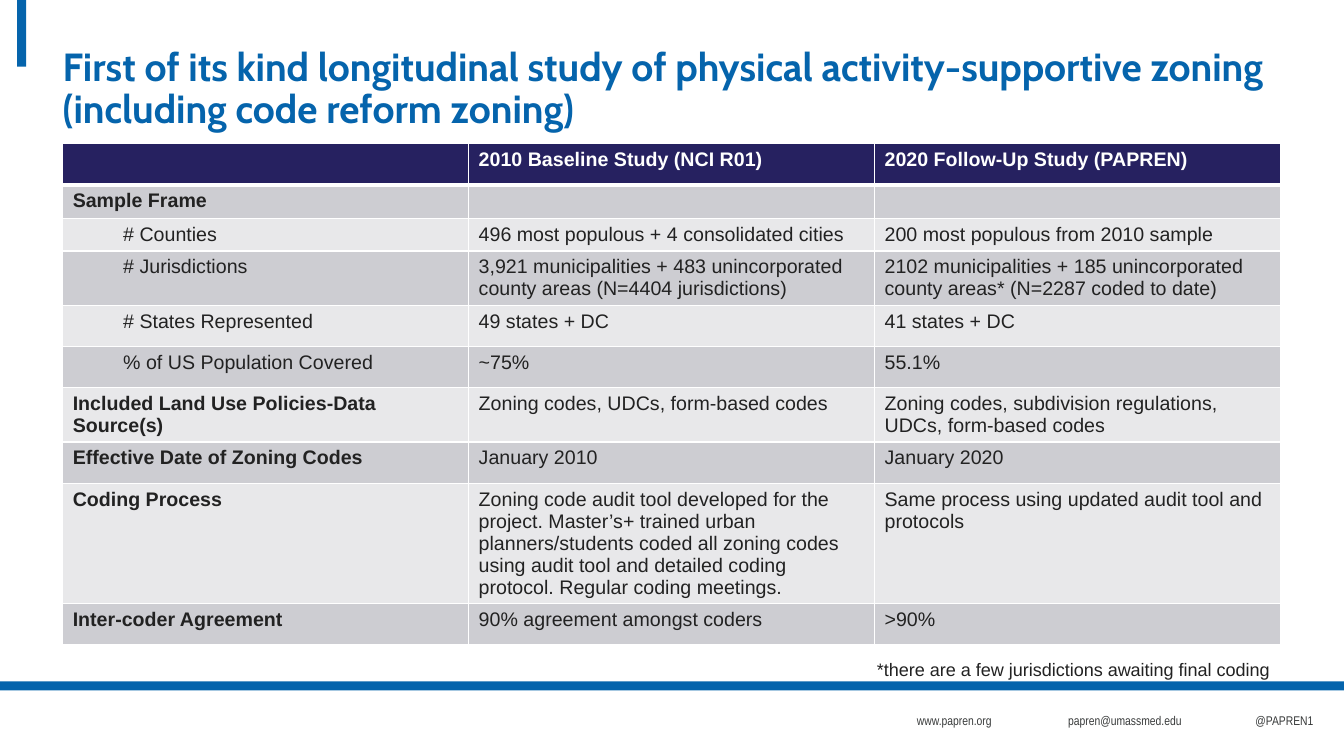
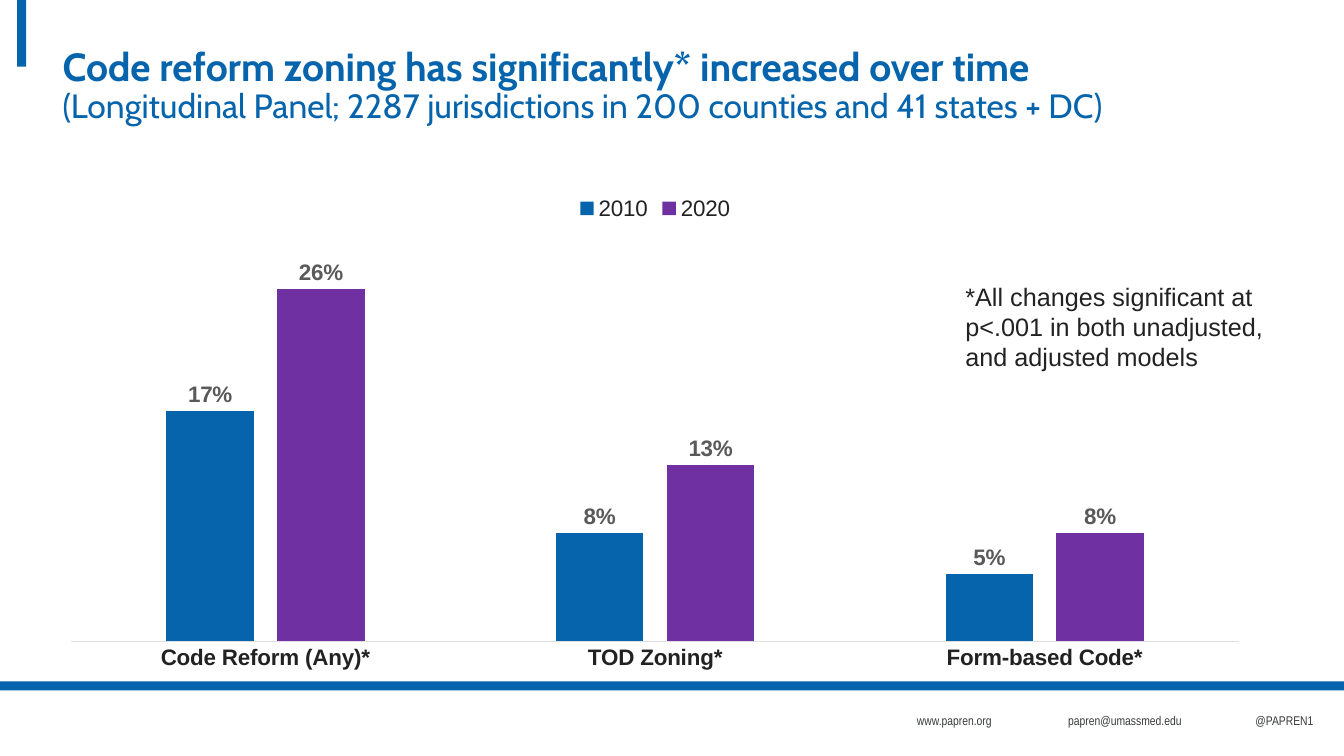
from lxml import etree
from pptx import Presentation
from pptx.chart.data import CategoryChartData
from pptx.dml.color import RGBColor
from pptx.enum.chart import XL_CHART_TYPE, XL_LABEL_POSITION, XL_LEGEND_POSITION, XL_TICK_MARK
from pptx.enum.shapes import MSO_SHAPE
from pptx.enum.text import MSO_ANCHOR, MSO_AUTO_SIZE, PP_ALIGN
from pptx.oxml.ns import qn
from pptx.util import Cm, Pt

RECT = MSO_SHAPE.RECTANGLE
TOP = MSO_ANCHOR.TOP
LEFT = PP_ALIGN.LEFT
NO_FIT = MSO_AUTO_SIZE.NONE
COLUMNS = XL_CHART_TYPE.COLUMN_CLUSTERED
OUTSIDE = XL_LABEL_POSITION.OUTSIDE_END
LEGEND_TOP = XL_LEGEND_POSITION.TOP
NO_TICKS = XL_TICK_MARK.NONE

BLUE, PURPLE, NAVY = "0564AC", "6F31A1", "262160"
INK, GREY, WHITE = "222222", "383A3A", "FFFFFF"
BANDS = ["CDCDD2", "E8E8EA"]
rgb = RGBColor.from_string


def style(font, size, color=INK, bold=False, name="Arial"):
    font.size = Pt(size)
    font.bold = bold
    font.name = name
    font.color.rgb = rgb(color)


def text(p, content, **fmt):
    r = p.add_run()
    r.text = content
    style(r.font, **fmt)


prs = Presentation()
prs.slide_width, prs.slide_height = Cm(33.87), Cm(19.05)
layout = prs.slide_layouts[5]
for ph in list(layout.placeholders)[1:]:
    ph._element.getparent().remove(ph._element)
title = layout.placeholders[0]
title.left, title.top, title.width, title.height = Cm(1.58), Cm(1.19), Cm(30.68), Cm(2.26)
tf = title.text_frame
tf.margin_left = tf.margin_top = tf.margin_right = tf.margin_bottom = 0
tf.vertical_anchor = TOP
tf.auto_size = NO_FIT

titles = [
    [("First of its kind longitudinal study of physical activity-supportive zoning "
      "(including code reform zoning)", 28, True)],
    [("Code reform zoning has significantly* increased over time", 28, True),
     ("(Longitudinal Panel; 2287 jurisdictions in 200 counties and 41 states + DC)", 24, False)],
]
for lines in titles:
    s = prs.slides.add_slide(layout)
    p = s.shapes.title.text_frame.paragraphs[0]
    p.alignment = LEFT
    p.line_spacing = 0.9
    for i, (content, size, bold) in enumerate(lines):
        if i:
            p.add_line_break()
        text(p, content, size=size, color=BLUE, bold=bold, name="Cabin")
study, results = prs.slides

shared = []
for x, y, w, h in [(0, 17.17, 33.87, 0.23), (0.43, 0, 0.23, 1.68)]:
    sp = study.shapes.add_shape(RECT, Cm(x), Cm(y), Cm(w), Cm(h))
    sp.shadow.inherit = False
    sp.fill.solid()
    sp.fill.fore_color.rgb = rgb(BLUE)
    sp.line.fill.background()
    shared.append(sp)
for x, w, contact in [(22.86, 2.44, "www.papren.org"), (26.67, 3.4, "papren@umassmed.edu"),
                      (31.39, 2.01, "@PAPREN1")]:
    sp = study.shapes.add_textbox(Cm(x), Cm(17.83), Cm(w), Cm(0.64))
    sp.text_frame.word_wrap = False
    text(sp.text_frame.paragraphs[0], contact, size=9, color=GREY, name="Arial Narrow")
    shared.append(sp)
for sp in shared:
    layout.shapes._spTree.append(sp._element)

rows = [
    (1.04, "", "2010 Baseline Study (NCI R01)", "2020 Follow-Up Study (PAPREN)"),
    (0.81, "Sample Frame", "", ""),
    (0.81, "# Counties", "496 most populous + 4 consolidated cities", "200 most populous from 2010 sample"),
    (1.36, "# Jurisdictions", "3,921 municipalities + 483 unincorporated county areas (N=4404 jurisdictions)",
     "2102 municipalities + 185 unincorporated county areas* (N=2287 coded to date)"),
    (1.04, "# States Represented", "49 states + DC", "41 states + DC"),
    (1.04, "% of US Population Covered", "~75%", "55.1%"),
    (1.36, "Included Land Use Policies-Data Source(s)", "Zoning codes, UDCs, form-based codes",
     "Zoning codes, subdivision regulations, UDCs, form-based codes"),
    (1.04, "Effective Date of Zoning Codes", "January 2010", "January 2020"),
    (3.02, "Coding Process",
     "Zoning code audit tool developed for the project. Master’s+ trained urban planners/students "
     "coded all zoning codes using audit tool and detailed coding protocol. Regular coding meetings.",
     "Same process using updated audit tool and protocols"),
    (1.04, "Inter-coder Agreement", "90% agreement amongst coders", ">90%"),
]
height = sum(row[0] for row in rows)
table = study.shapes.add_table(len(rows), 3, Cm(1.58), Cm(3.62), Cm(30.68), Cm(height)).table
table.horz_banding = False
for col in table.columns:
    col.width = Cm(10.23)
for i, (row_height, *contents) in enumerate(rows):
    table.rows[i].height = Cm(row_height)
    for j, content in enumerate(contents):
        cell = table.cell(i, j)
        p = cell.text_frame.paragraphs[0]
        indented = j == 0 and content.startswith(("#", "%"))
        if indented:
            p.level = 1
            p._p.get_or_add_pPr().set("marL", str(Cm(1.27)))
        if content:
            text(p, content, size=14, color=INK if i else WHITE, bold=i == 0 or (j == 0 and not indented))
        else:
            p._p.get_or_add_endParaRPr().set("sz", "1400")
        tcPr = cell._tc.get_or_add_tcPr()
        for side in "LRTB":
            thick = (i, side) in [(0, "B"), (1, "T")]
            ln = etree.SubElement(tcPr, qn("a:ln" + side), w=str(Pt(3 if thick else 1)))
            fill = etree.SubElement(ln, qn("a:solidFill"))
            etree.SubElement(fill, qn("a:srgbClr"), val=WHITE)
        cell.fill.solid()
        cell.fill.fore_color.rgb = rgb(BANDS[(i - 1) % 2] if i else NAVY)

sp = study.shapes.add_textbox(Cm(22.1), Cm(16.54), Cm(11.77), Cm(0.56))
tf = sp.text_frame
tf.word_wrap = True
tf.margin_left = tf.margin_top = tf.margin_right = tf.margin_bottom = 0
p = tf.paragraphs[0]
p.line_spacing = 1.1
text(p, "*there are a few jurisdictions awaiting final coding", size=12.9)

data = CategoryChartData(number_format="0%")
data.categories = ["Code Reform (Any)*", "TOD Zoning*", "Form-based Code*"]
data.add_series("2010", [0.17, 0.08, 0.05])
data.add_series("2020", [0.26, 0.13, 0.08])
chart = results.shapes.add_chart(COLUMNS, Cm(1.17), Cm(4.65), Cm(30.68), Cm(12.47), data).chart
style(chart.font, 10)
chart.has_title = False
chart.has_legend = True
chart.legend.position = LEGEND_TOP
chart.legend.include_in_layout = False
style(chart.legend.font, 16)
axis = chart.category_axis
axis.major_tick_mark = axis.minor_tick_mark = NO_TICKS
axis.format.line.color.rgb = rgb("DEDEDE")
axis.format.line.width = Pt(0.75)
style(axis.tick_labels.font, 16, bold=True)
axis = chart.value_axis
axis.visible = False
axis.has_major_gridlines = False
axis.minimum_scale, axis.maximum_scale = 0, 0.3
plot = chart.plots[0]
plot.vary_by_categories = False
plot.gap_width, plot.overlap = 219, -27
for series, color in zip(plot.series, [BLUE, PURPLE]):
    series.format.fill.solid()
    series.format.fill.fore_color.rgb = rgb(color)
    labels = series.data_labels
    labels.show_value = True
    labels.position = OUTSIDE
    labels.number_format = "0%"
    labels.number_format_is_linked = False
    style(labels.font, 16, color="595959", bold=True)

sp = results.shapes.add_textbox(Cm(24.08), Cm(6.96), Cm(8.18), Cm(2.57))
sp.text_frame.word_wrap = True
text(sp.text_frame.paragraphs[0],
     "*All changes significant at p<.001 in both unadjusted, and adjusted models", size=18)

prs.save("out.pptx")
